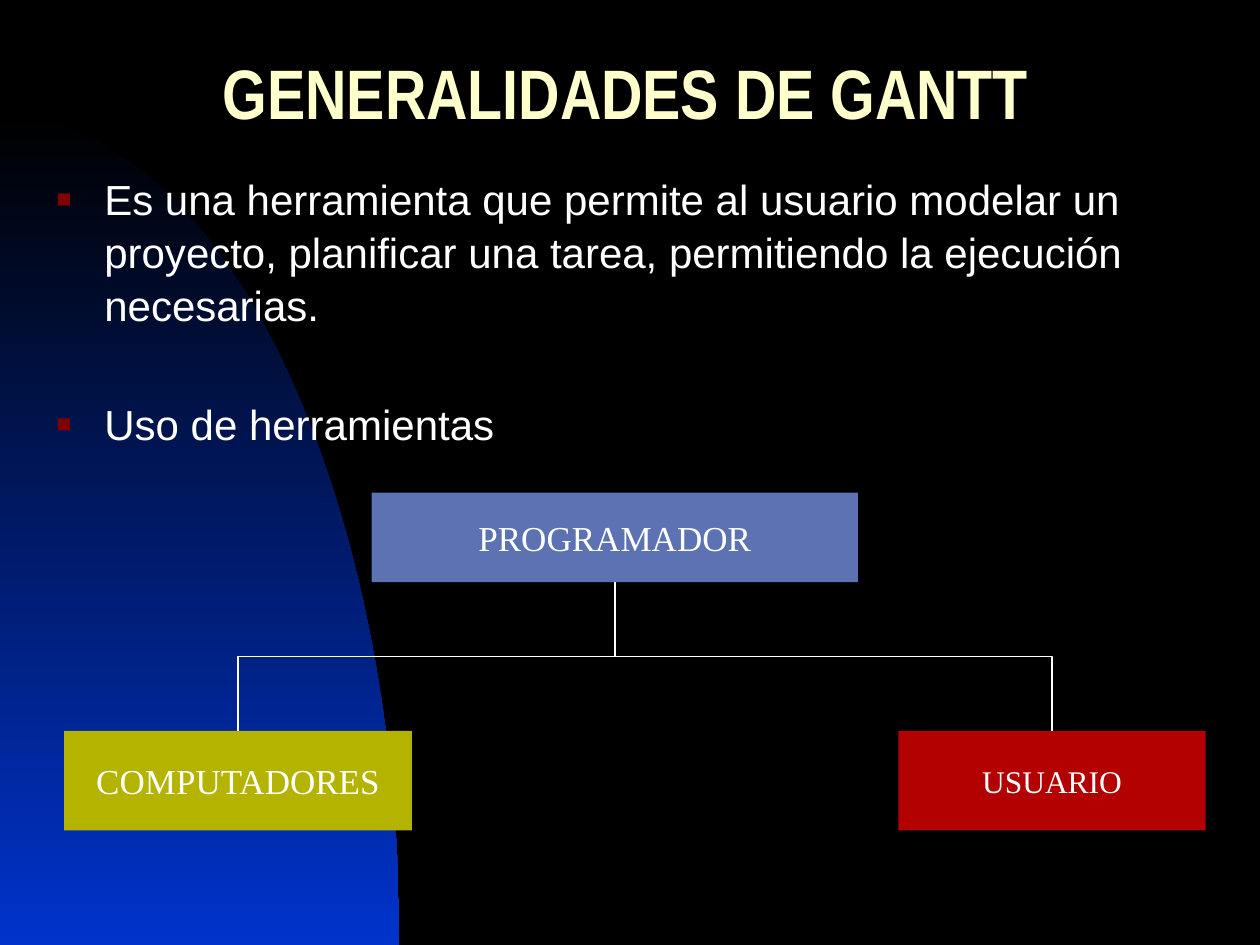
from lxml import etree
from pptx import Presentation
from pptx import util as u
from pptx.dml.color import RGBColor
from pptx.enum import shapes, text
from pptx.oxml.ns import qn

BLACK = RGBColor(0x00, 0x00, 0x00)
BLUE = RGBColor(0x00, 0x33, 0xCC)
CREAM = RGBColor(0xFF, 0xFF, 0xCC)
WHITE = RGBColor(0xFF, 0xFF, 0xFF)
PERIWINKLE = RGBColor(0x5D, 0x72, 0xB3)
RED = RGBColor(0xB3, 0x00, 0x00)
OLIVE = RGBColor(0xB3, 0xB3, 0x00)
BULLET = "800000"

BULLETS = [
    ("Es una herramienta que permite al usuario modelar un proyecto, "
     "planificar una tarea, permitiendo la ejecución necesarias.", 1),
    ("Uso de herramientas", 38),
]


def add_run(p, words, font, size, color, bold=False):
    r = p.add_run()
    r.text = words
    r.font.name = font
    r.font.size = u.Pt(size)
    r.font.bold = bold
    r.font.color.rgb = color


def add_arc(s, top, right, bottom, steps=60):
    start, ends = (0, top), (right, bottom)
    controls = (right * 0.55, top), (right, top + (bottom - top) * 0.45)
    points = []
    for i in range(steps + 1):
        t = i / steps
        weights = (1 - t) ** 3, 3 * t * (1 - t) ** 2, 3 * t ** 2 * (1 - t), t ** 3
        curve = (start, *controls, ends)
        points.append(tuple(u.Inches(sum(w * c[k] for w, c in zip(weights, curve)))
                            for k in (0, 1)))
    points.append((0, u.Inches(bottom)))
    builder = s.shapes.build_freeform(*points[0])
    builder.add_line_segments(points[1:], close=True)
    sp = builder.convert_to_shape()
    sp.shadow.inherit = False
    sp.line.fill.background()
    sp.fill.gradient()
    sp.fill.gradient_angle = 270
    for stop, color, position in zip(sp.fill.gradient_stops, (BLACK, BLUE), (0, 1)):
        stop.color.rgb = color
        stop.position = position


def add_text_frame(s, left, top, width, height):
    tf = s.shapes.add_textbox(*map(u.Inches, (left, top, width, height))).text_frame
    tf.word_wrap = True
    return tf


def add_title(s, words):
    tf = add_text_frame(s, 0.31, 0.31, 9.31, 0.99)
    tf.vertical_anchor = text.MSO_ANCHOR.MIDDLE
    p = tf.paragraphs[0]
    p.alignment = text.PP_ALIGN.CENTER
    p.line_spacing = 0.7
    add_run(p, words, "Arial Narrow", 40, CREAM, True)


def set_bullet(p):
    props = p._p.get_or_add_pPr()
    props.set("marL", str(u.Inches(0.38)))
    props.set("indent", str(-u.Inches(0.38)))
    color = etree.SubElement(props, qn("a:buClr"))
    etree.SubElement(color, qn("a:srgbClr"), val=BULLET)
    etree.SubElement(props, qn("a:buSzPct"), val="60000")
    etree.SubElement(props, qn("a:buFont"), typeface="Arial")
    etree.SubElement(props, qn("a:buChar"), char="■")


def add_bullets(s, items):
    tf = add_text_frame(s, 0.35, 1.31, 9.13, 1.73)
    for i, (words, before) in enumerate(items):
        p = tf.add_paragraph() if i else tf.paragraphs[0]
        p.line_spacing = 1.05
        p.space_before = u.Pt(before)
        set_bullet(p)
        add_run(p, words, "Arial", 24, WHITE)


def add_box(s, words, left, top, width, height, fill, size):
    sp = s.shapes.add_shape(shapes.MSO_SHAPE.RECTANGLE,
                            *map(u.Inches, (left, top, width, height)))
    sp.shadow.inherit = False
    sp.fill.solid()
    sp.fill.fore_color.rgb = fill
    sp.line.fill.background()
    tf = sp.text_frame
    tf.vertical_anchor = text.MSO_ANCHOR.MIDDLE
    p = tf.paragraphs[0]
    p.alignment = text.PP_ALIGN.CENTER
    add_run(p, words, "Times New Roman", size, WHITE)
    return sp


def add_branch(s, parent, child):
    x1, y1 = parent.left + parent.width // 2, parent.top + parent.height
    x2, y2 = child.left + child.width // 2, child.top
    c = s.shapes.add_connector(shapes.MSO_CONNECTOR.ELBOW, x1, y1, x2, y2)
    c.begin_connect(parent, 2)
    c.end_connect(child, 0)
    c.width, c.height = y2 - y1, abs(x2 - x1)
    c.left = (x1 + x2 - c.width) // 2
    c.top = (y1 + y2 - c.height) // 2
    to_right = x2 > x1
    xfrm = c._element.spPr.find(qn("a:xfrm"))
    xfrm.set("rot", str((270 if to_right else 90) * 60000))
    xfrm.set("flipH", "1" if to_right else "0")
    xfrm.set("flipV", "0")
    c.line.color.rgb = WHITE
    c.line.width = u.Pt(1)
    etree.SubElement(c._element.spPr, qn("a:effectLst"))


def main():
    prs = Presentation()
    prs.slide_width, prs.slide_height = u.Inches(10), u.Inches(7.5)
    s = prs.slides.add_slide(prs.slide_layouts[6])
    s.background.fill.solid()
    s.background.fill.fore_color.rgb = BLACK
    add_arc(s, 0.92, 3.17, 7.5)
    add_title(s, "GENERALIDADES DE GANTT")
    add_bullets(s, BULLETS)
    programmer = add_box(s, "PROGRAMADOR", 2.95, 3.91, 3.86, 0.71, PERIWINKLE, 20)
    user = add_box(s, "USUARIO", 7.13, 5.8, 2.44, 0.79, RED, 18)
    computers = add_box(s, "COMPUTADORES", 0.51, 5.8, 2.76, 0.79, OLIVE, 20)
    for child in (computers, user):
        add_branch(s, programmer, child)
    prs.save("out.pptx")


if __name__ == "__main__":
    main()
